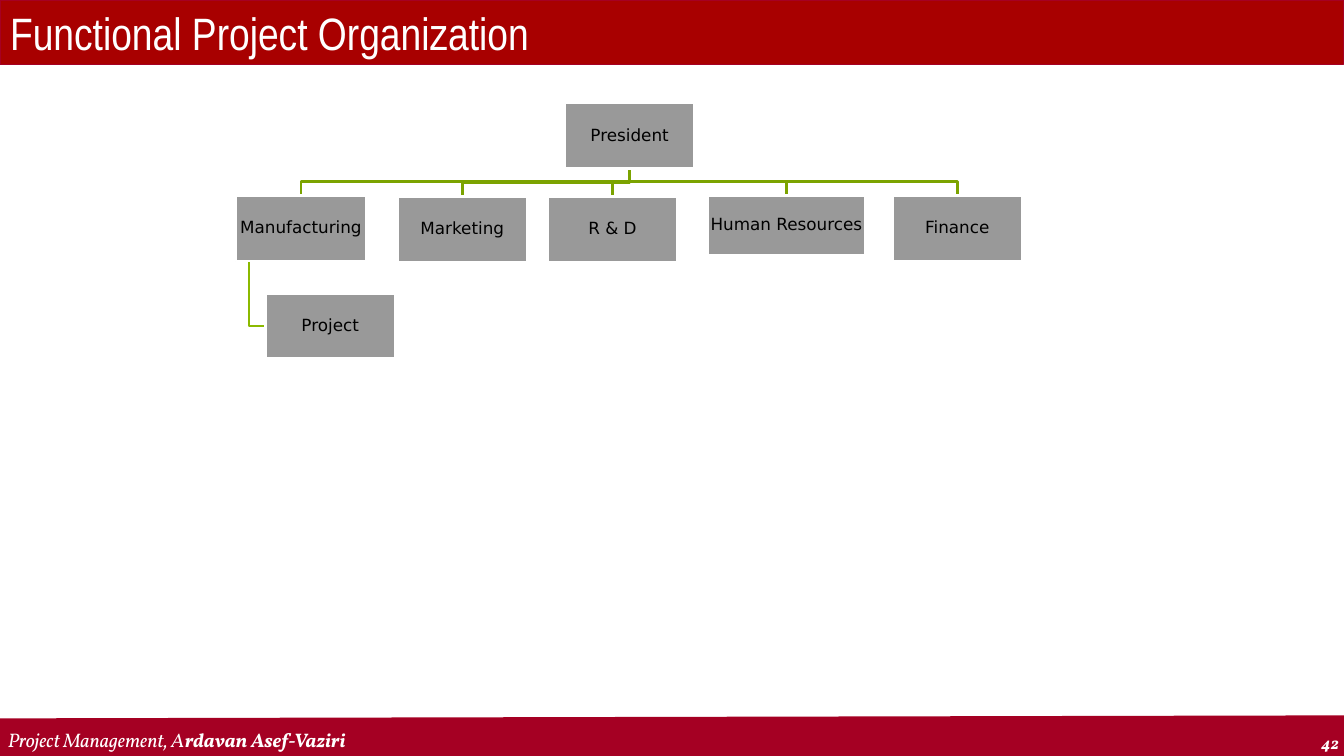
from lxml.etree import SubElement
from pptx import Presentation
from pptx.dml.color import RGBColor
from pptx.enum.shapes import MSO_CONNECTOR, MSO_SHAPE
from pptx.enum.text import MSO_ANCHOR, MSO_AUTO_SIZE, PP_ALIGN
from pptx.oxml.ns import qn
from pptx.util import Inches, Pt

WHITE = RGBColor(0xFF, 0xFF, 0xFF)
BLACK = RGBColor(0x00, 0x00, 0x00)
GRAY = RGBColor(0x99, 0x99, 0x99)
TITLE_RED = RGBColor(0xA8, 0x00, 0x00)
FOOTER_RED = RGBColor(0xA5, 0x00, 0x23)
BRANCH_GREEN = RGBColor(0x7B, 0xA3, 0x00)
PROJECT_GREEN = RGBColor(0x8B, 0xB9, 0x00)

BOX_WIDTH, BOX_HEIGHT = 1.29, 0.65
PRESIDENT_LEFT, PRESIDENT_TOP = 5.6, 1.02
PROJECT_LEFT, PROJECT_TOP = 2.63, 2.91

# Name, left, top, width, height
DEPARTMENTS = [
    ("Finance", 8.85, 1.94, BOX_WIDTH, BOX_HEIGHT),
    ("Human Resources", 7.02, 1.94, 1.56, 0.59),
    ("R & D", 5.43, 1.95, BOX_WIDTH, BOX_HEIGHT),
    ("Marketing", 3.94, 1.95, BOX_WIDTH, BOX_HEIGHT),
    ("Manufacturing", 2.34, 1.94, BOX_WIDTH, BOX_HEIGHT),
]


def set_line(shape, color, width):
    shape.line.color.rgb = color
    shape.line.width = Pt(width)


def add_run(paragraph, text, font_name, size, color, bold=False, italic=False):
    run = paragraph.add_run()
    run.text = text
    font = run.font
    font.name, font.size, font.bold, font.italic = font_name, Pt(size), bold, italic
    font.color.rgb = color


def add_rectangle(slide, left, top, width, height, fill, line, line_width):
    shape = slide.shapes.add_shape(
        MSO_SHAPE.RECTANGLE, Inches(left), Inches(top), Inches(width), Inches(height))
    shape.shadow.inherit = False
    shape.fill.solid()
    shape.fill.fore_color.rgb = fill
    set_line(shape, line, line_width)
    return shape


def add_box(slide, name, left, top, width=BOX_WIDTH, height=BOX_HEIGHT):
    shape = add_rectangle(slide, left, top, width, height, GRAY, WHITE, 2)
    frame = shape.text_frame
    frame.word_wrap = True
    frame.vertical_anchor = MSO_ANCHOR.MIDDLE
    frame.margin_left = frame.margin_right = Inches(0.01)
    frame.margin_top = frame.margin_bottom = Inches(0.01)
    paragraph = frame.paragraphs[0]
    paragraph.alignment = PP_ALIGN.CENTER
    paragraph.line_spacing = 0.9
    paragraph.space_after = Pt(4.2)
    add_run(paragraph, name, "DejaVu Sans", 12, BLACK)


def add_branch(slide, points, color):
    start, *corners = [(Inches(x), Inches(y)) for x, y in points]
    builder = slide.shapes.build_freeform(*start)
    builder.add_line_segments(corners, close=False)
    shape = builder.convert_to_shape()
    shape.shadow.inherit = False
    shape.fill.background()
    set_line(shape, color, 2)


def add_footer_text(slide, left, top, width, height, runs, alignment, anchor):
    box = slide.shapes.add_textbox(
        Inches(left), Inches(top), Inches(width), Inches(height))
    frame = box.text_frame
    frame.word_wrap = True
    frame.vertical_anchor = anchor
    paragraph = frame.paragraphs[0]
    paragraph.alignment = alignment
    for text, size, bold in runs:
        add_run(paragraph, text, "Vollkorn", size, WHITE, bold, italic=True)


def add_footer(slide):
    band = slide.shapes.add_connector(
        MSO_CONNECTOR.STRAIGHT, Inches(-0.01), Inches(7.33), Inches(13.36), Inches(7.3))
    set_line(band, FOOTER_RED, 29.25)
    SubElement(band._element.spPr, qn("a:effectLst"))
    add_footer_text(slide, 12.38, 7.22, 1, 0.3, [("42", 12, True)],
                    PP_ALIGN.RIGHT, MSO_ANCHOR.TOP)
    add_footer_text(slide, -0.02, 7.16, 10.45, 0.34,
                    [("Project Management, A", 14, False),
                     ("rdavan Asef-Vaziri", 14, True)],
                    PP_ALIGN.LEFT, MSO_ANCHOR.BOTTOM)


def add_title(slide, text):
    title = slide.shapes.title
    bar = add_rectangle(slide, 0, -0.01, 13.33, 0.64, TITLE_RED, TITLE_RED, 0.75)
    title._element.addprevious(bar._element)  # the bar lies behind the title
    title.left, title.top = Inches(0), Inches(0)
    title.width, title.height = Inches(13.33), Inches(0.64)
    set_line(title, FOOTER_RED, 0.75)
    frame = title.text_frame
    frame.auto_size = MSO_AUTO_SIZE.NONE
    frame.vertical_anchor = MSO_ANCHOR.MIDDLE
    paragraph = frame.paragraphs[0]
    paragraph.alignment = PP_ALIGN.LEFT
    add_run(paragraph, text, "Arial Narrow", 32.4, WHITE)


def add_organization(slide):
    # Branches from the president to each department
    trunk_x = PRESIDENT_LEFT + BOX_WIDTH / 2
    trunk_y = PRESIDENT_TOP + BOX_HEIGHT
    for _, left, top, width, _ in DEPARTMENTS:
        center, bend = left + width / 2, top - 0.14
        add_branch(slide, [(trunk_x, trunk_y), (trunk_x, bend),
                           (center, bend), (center, top)], BRANCH_GREEN)

    # Branch from manufacturing to its project
    _, left, top, _, height = DEPARTMENTS[-1]
    stem_x, project_y = left + 0.13, PROJECT_TOP + BOX_HEIGHT / 2
    add_branch(slide, [(stem_x, top + height), (stem_x, project_y),
                       (PROJECT_LEFT, project_y)], PROJECT_GREEN)

    # Boxes
    add_box(slide, "President", PRESIDENT_LEFT, PRESIDENT_TOP)
    for department in DEPARTMENTS:
        add_box(slide, *department)
    add_box(slide, "Project", PROJECT_LEFT, PROJECT_TOP)


def main():
    presentation = Presentation()
    presentation.slide_width = Inches(13.33)
    presentation.slide_height = Inches(7.5)
    slide = presentation.slides.add_slide(presentation.slide_layouts[5])
    add_footer(slide)
    add_title(slide, "Functional Project Organization")
    add_organization(slide)
    presentation.save("out.pptx")


if __name__ == "__main__":
    main()
